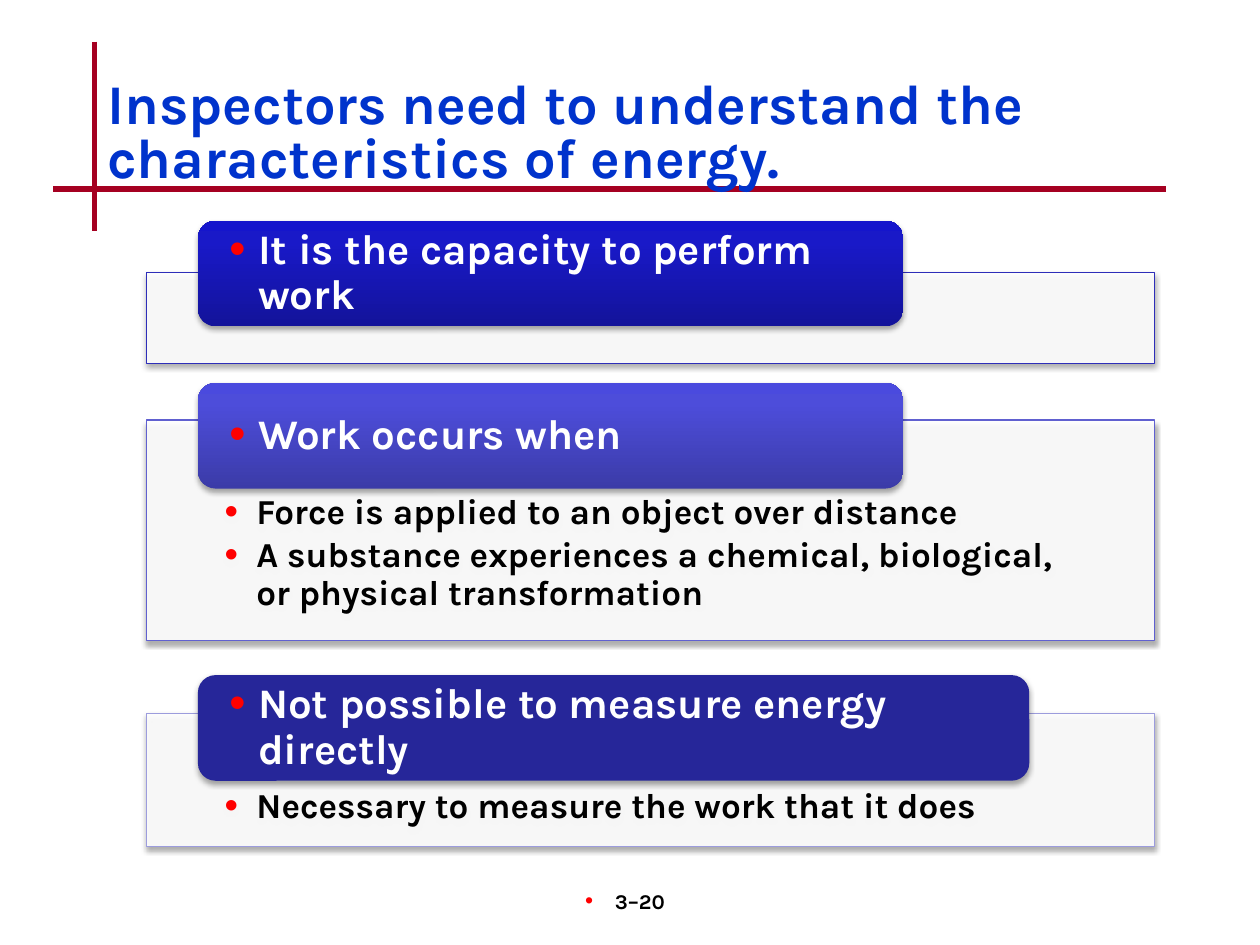
from lxml import etree
from pptx import Presentation
from pptx.dml.color import RGBColor
from pptx.enum.shapes import MSO_CONNECTOR, MSO_SHAPE
from pptx.enum.text import MSO_ANCHOR, PP_ALIGN
from pptx.oxml.ns import qn
from pptx.util import Cm, Pt

LINE = MSO_CONNECTOR.STRAIGHT
RECT, ROUND = MSO_SHAPE.RECTANGLE, MSO_SHAPE.ROUNDED_RECTANGLE
TOP, MIDDLE, BOTTOM = MSO_ANCHOR.TOP, MSO_ANCHOR.MIDDLE, MSO_ANCHOR.BOTTOM
LEFT, CENTER = PP_ALIGN.LEFT, PP_ALIGN.CENTER

FONT = "Karla"
COLORS = {"title": "0033CC", "rule": "A50021", "bullet": "FF0000",
          "black": "000000", "white": "FFFFFF"}

# Content: lengths in cm, gradient stops as (percent, colour) from the bottom up
TITLE = "Inspectors need to understand the characteristics of energy."
PAGE = "3–20"
RULES = [(1.91, 0.84, 1.91, 4.65), (1.07, 3.81, 23.5, 3.81)]
BLOCKS = [
    {"head": "It is the capacity to perform work", "points": [],
     "tab": (4.45, 14.22), "panel": (5.5, 1.83), "line": "2E2EB9",
     "fill": [(0, "13139A"), (80, "1919C8"), (100, "1515CC")]},
    {"head": "Work occurs when",
     "points": ["Force is applied to an object over distance",
                "A substance experiences a chemical, biological, "
                "or physical transformation"],
     "tab": (7.72, 14.22), "panel": (8.47, 4.45), "line": "6060D0",
     "fill": [(0, "3B3BA8"), (80, "4D4DDA"), (100, "4A4ADE")]},
    {"head": "Not possible to measure energy directly",
     "points": ["Necessary to measure the work that it does"],
     "tab": (13.61, 16.76), "panel": (14.39, 2.67), "line": "9C9CDD",
     "fill": [(0, "262699"), (100, "262699")]},
]
PANEL_X, PANEL_W = 2.96, 20.32
TAB_X, TAB_H = 3.99, 2.13


def rgb(color):
    return RGBColor.from_string(color)


def sub(parent, tag, **attrs):
    return etree.SubElement(parent, qn(tag), {k: str(v) for k, v in attrs.items()})


def add_bullet(p, indent):
    pPr = p._p.get_or_add_pPr()
    pPr.set("marL", str(Cm(indent)))
    pPr.set("indent", str(-Cm(indent)))
    sub(sub(pPr, "a:buClr"), "a:srgbClr", val=COLORS["bullet"])
    sub(pPr, "a:buSzPct", val=110000)
    sub(pPr, "a:buFont", typeface="Arial")
    sub(pPr, "a:buChar", char="•")


def write(sp, texts, size, color, anchor=TOP, align=LEFT, spacing=1.0, after=0,
          indent=None, insets=(0.25, 0.13, 0.25, 0.13)):
    tf = sp.text_frame
    tf.word_wrap = True
    tf.vertical_anchor = anchor
    (tf.margin_left, tf.margin_top,
     tf.margin_right, tf.margin_bottom) = [Cm(v) for v in insets]
    for i, text in enumerate(texts):
        p = tf.paragraphs[0] if i == 0 else tf.add_paragraph()
        if indent:
            add_bullet(p, indent)
        p.alignment, p.line_spacing, p.space_after = align, spacing, Pt(after)
        r = p.add_run()
        r.text = text
        r.font.name, r.font.size, r.font.bold = FONT, Pt(size), True
        r.font.color.rgb = rgb(color)


def add_shadow(sp):
    sp.shadow.inherit = False
    effects = sp._element.spPr.find(qn("a:effectLst"))
    shadow = sub(effects, "a:outerShdw", blurRad=Pt(3.1), dist=Pt(1.8),
                 dir=5400000, rotWithShape=0)
    sub(sub(shadow, "a:srgbClr", val=COLORS["black"]), "a:alpha", val=35000)


def add_panel(s, top, height, line):
    sp = s.shapes.add_shape(RECT, Cm(PANEL_X), Cm(top), Cm(PANEL_W), Cm(height))
    sp.fill.solid()
    sp.fill.fore_color.rgb = rgb(COLORS["white"])
    sub(sp._element.spPr.find(".//" + qn("a:srgbClr")), "a:alpha", val=90000)
    sp.line.color.rgb = rgb(line)
    sp.line.width = Pt(0.75)
    add_shadow(sp)
    return sp


def add_tab(s, top, width, stops):
    sp = s.shapes.add_shape(ROUND, Cm(TAB_X), Cm(top), Cm(width), Cm(TAB_H))
    if len({color for _, color in stops}) == 1:
        sp.fill.solid()
        sp.fill.fore_color.rgb = rgb(stops[0][1])
    else:
        sp.fill.gradient()
        sp.fill.gradient_angle = 90
        gs_list = sp._element.spPr.find(".//" + qn("a:gsLst"))
        for gs in list(gs_list):
            gs_list.remove(gs)
        for pos, color in stops:
            sub(sub(gs_list, "a:gs", pos=pos * 1000), "a:srgbClr", val=color)
    sp.line.fill.background()
    add_shadow(sp)
    return sp


def main():
    prs = Presentation()
    prs.slide_width, prs.slide_height = Cm(25.4), Cm(19.05)
    s = prs.slides.add_slide(prs.slide_layouts[6])

    # Crossed rules beside the title
    for ends in RULES:
        rule = s.shapes.add_connector(LINE, *[Cm(v) for v in ends])
        rule.line.color.rgb = rgb(COLORS["rule"])
        rule.line.width = Pt(3)
        sub(rule._element.spPr, "a:effectLst")

    # Title and page number
    title = s.shapes.add_textbox(Cm(1.91), Cm(1.4), Cm(21.59), Cm(2.54))
    write(title, [TITLE], 32, COLORS["title"], anchor=BOTTOM, spacing=0.8)
    page = s.shapes.add_textbox(Cm(9.96), Cm(17.78), Cm(5.28), Cm(1.27))
    write(page, [PAGE], 12, COLORS["black"], align=CENTER, indent=0.6)

    # Panels with a heading tab over the top edge
    for block in BLOCKS:
        panel = add_panel(s, *block["panel"], block["line"])
        write(panel, block["points"], 20, COLORS["black"], spacing=0.9, after=3,
              indent=0.64, insets=(1.57, 1.5, 1.57, 0.41))
        tab = add_tab(s, *block["tab"], block["fill"])
        write(tab, [block["head"]], 24, COLORS["white"], anchor=MIDDLE,
              spacing=0.9, indent=0.58, insets=(0.53, 0, 0.53, 0))

    prs.save("out.pptx")


if __name__ == "__main__":
    main()
